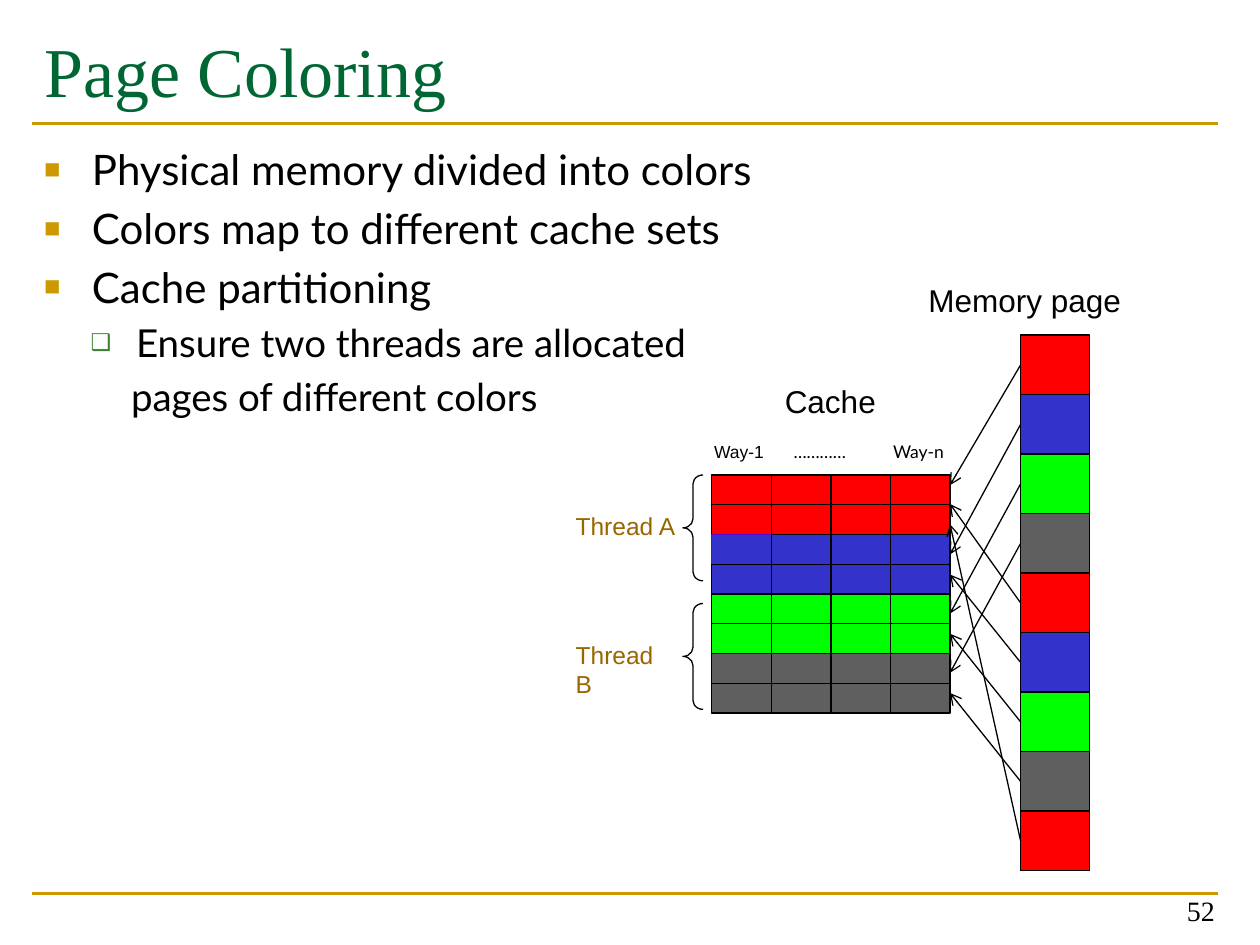
import pptx
import pptx.util
import pptx.dml.color
import pptx.enum.shapes
import pptx.enum.text
import pptx.oxml
import pptx.oxml.ns
from lxml import etree

Inches, Pt = pptx.util.Inches, pptx.util.Pt
RGBColor = pptx.dml.color.RGBColor
SHAPE = pptx.enum.shapes.MSO_SHAPE
ANCHOR = pptx.enum.text.MSO_ANCHOR
ALIGN = pptx.enum.text.PP_ALIGN
qn = pptx.oxml.ns.qn

BLACK = RGBColor(0x00, 0x00, 0x00)
GOLD = RGBColor(0xCC, 0x99, 0x00)
GREEN_TITLE = RGBColor(0x00, 0x66, 0x33)
GREEN_BULLET = RGBColor(0x3B, 0x81, 0x2F)
BROWN = RGBColor(0x99, 0x66, 0x00)
VIOLET = RGBColor(0x66, 0x00, 0xCC)
PAGE_COLORS = [
    RGBColor(0xFF, 0x00, 0x00),
    RGBColor(0x33, 0x33, 0xCC),
    RGBColor(0x00, 0xFF, 0x00),
    RGBColor(0x5F, 0x5F, 0x5F),
]

presentation = pptx.Presentation()
presentation.slide_width = Inches(10)
presentation.slide_height = Inches(7.5)
slide = presentation.slides.add_slide(presentation.slide_layouts[1])


def write(frame, text, size=18, font="Arial", color=BLACK, align=ALIGN.LEFT,
          anchor=ANCHOR.TOP, wrap=True, new=False):
    frame.word_wrap = wrap
    frame.auto_size = pptx.enum.text.MSO_AUTO_SIZE.NONE
    frame.vertical_anchor = anchor
    paragraph = frame.add_paragraph() if new else frame.paragraphs[0]
    paragraph.alignment = align
    run = paragraph.add_run()
    run.text = text
    run.font.size = Pt(size)
    run.font.name = font
    run.font.color.rgb = color
    return paragraph


def draw_line(start, end, color=BLACK, width=0.75, arrow=False):
    line = slide.shapes.add_connector(
        pptx.enum.shapes.MSO_CONNECTOR.STRAIGHT,
        Inches(start[0]), Inches(start[1]), Inches(end[0]), Inches(end[1]))
    line.line.color.rgb = color
    line.line.width = Pt(width)
    if arrow:
        etree.SubElement(line.line._get_or_add_ln(), qn("a:tailEnd"), type="arrow")
    etree.SubElement(line._element.spPr, qn("a:effectLst"))


# Rules above and below the content
for rule_y in (7.09, 0.98):
    draw_line((0.25, rule_y), (9.67, rule_y), GOLD, 1.5)

# Title
title = slide.shapes.title
title.left, title.top, title.width, title.height = map(Inches, (0.25, 0.17, 9.42, 1.17))
write(title.text_frame, "Page Coloring", size=40, font="Times New Roman", color=GREEN_TITLE)

# Bullet list: text, level, size, left margin, hanging indent, bullet, colour, bullet size
body = slide.placeholders[1]
body.left, body.top, body.width, body.height = map(Inches, (0.25, 1.09, 9.42, 5.68))
top_level = (0, 24, 0.38, -0.38, "■", GOLD, 65)
points = [
    ("Physical memory divided into colors", *top_level),
    ("Colors map to different cache sets", *top_level),
    ("Cache partitioning", *top_level),
    ("Ensure two threads are allocated", 1, 22, 0.73, -0.36, "❑", GREEN_BULLET, 60),
    ("pages of different colors", 1, 22, 0.69, 0, None, None, None),
]
for i, (text, level, size, margin, indent, bullet, color, percent) in enumerate(points):
    point = write(body.text_frame, text, size=size, font="Lato", new=i > 0)
    point.level = level
    point.space_before = Pt(size * 0.2)
    properties = point._p.get_or_add_pPr()
    properties.set("marL", str(Inches(margin)))
    properties.set("indent", str(Inches(indent)))
    if bullet:
        bullet_color = etree.SubElement(properties, qn("a:buClr"))
        etree.SubElement(bullet_color, qn("a:srgbClr"), val=str(color))
        etree.SubElement(properties, qn("a:buSzPct"), val=str(percent * 1000))
        etree.SubElement(properties, qn("a:buChar"), char=bullet)
    else:
        etree.SubElement(properties, qn("a:buNone"))

# Cache sets (two rows per color), then memory pages (colors in turn)
CACHE_LEFT, CACHE_TOP, CACHE_SIZE, SETS, WAYS = 5.65, 3.77, 1.89, 8, 4
PAGE_LEFT, PAGE_TOP, PAGES = 8.1, 2.66, 9
set_height, way_width, page_height = CACHE_SIZE / SETS, CACHE_SIZE / WAYS, 4.25 / PAGES
blocks = [
    (CACHE_LEFT + way * way_width, CACHE_TOP + row * set_height, way_width, set_height,
     PAGE_COLORS[row // 2], VIOLET if (row, way) == (2, 0) else BLACK)
    for row in range(SETS) for way in range(WAYS)
] + [
    (PAGE_LEFT, PAGE_TOP + page * page_height, 0.55, page_height,
     PAGE_COLORS[page % len(PAGE_COLORS)], BLACK)
    for page in range(PAGES)
]
for left, top, width, height, fill, outline in blocks:
    block = slide.shapes.add_shape(
        SHAPE.RECTANGLE, Inches(left), Inches(top), Inches(width), Inches(height))
    block.shadow.inherit = False
    block.fill.solid()
    block.fill.fore_color.rgb = fill
    block.line.color.rgb = outline
    block.line.width = Pt(0.75)

# Braces joining each thread to its sets
for brace_top in (3.77, 4.79):
    brace = slide.shapes.add_shape(
        SHAPE.LEFT_BRACE, Inches(5.42), Inches(brace_top), Inches(0.16), Inches(0.84))
    brace.shadow.inherit = False
    brace.adjustments[0] = 0.45
    brace.fill.background()
    brace.line.color.rgb = BLACK
    brace.line.width = Pt(0.75)

# Labels and page number
labels = [
    ("Thread A", 4.47, 4.01, 1, 0.33, dict(size=14, color=BROWN, wrap=False)),
    ("Thread B", 4.47, 5.03, 0.95, 0.33, dict(size=14, color=BROWN)),
    ("Cache", 6.13, 2.98, 0.92, 0.4, dict(wrap=False)),
    ("Way-1", 5.57, 3.45, 0.6, 0.27, dict(size=10, wrap=False)),
    ("Way-n", 6.99, 3.45, 0.6, 0.27, dict(size=10, font="Lato", wrap=False)),
    ("…………", 6.2, 3.45, 0.76, 0.27, dict(size=10, font="Lato", wrap=False)),
    ("Memory page", 7.27, 2.18, 1.73, 0.4, dict(wrap=False)),
    ("52", 7.41, 6.91, 2.33, 0.5, dict(size=16, font="Times New Roman",
                                       align=ALIGN.RIGHT, anchor=ANCHOR.BOTTOM)),
]
for text, left, top, width, height, text_format in labels:
    label = slide.shapes.add_textbox(Inches(left), Inches(top), Inches(width), Inches(height))
    write(label.text_frame, text, **text_format)

# Arrows from the middle of each memory page to its cache set
set_targets = [3.85, 4.4, 4.87, 5.34, 4, 4.56, 5.03, 5.5, 4.16]
for page, target in enumerate(set_targets):
    draw_line((PAGE_LEFT, PAGE_TOP + (page + 0.5) * page_height), (7.54, target), arrow=True)

presentation.save("out.pptx")
